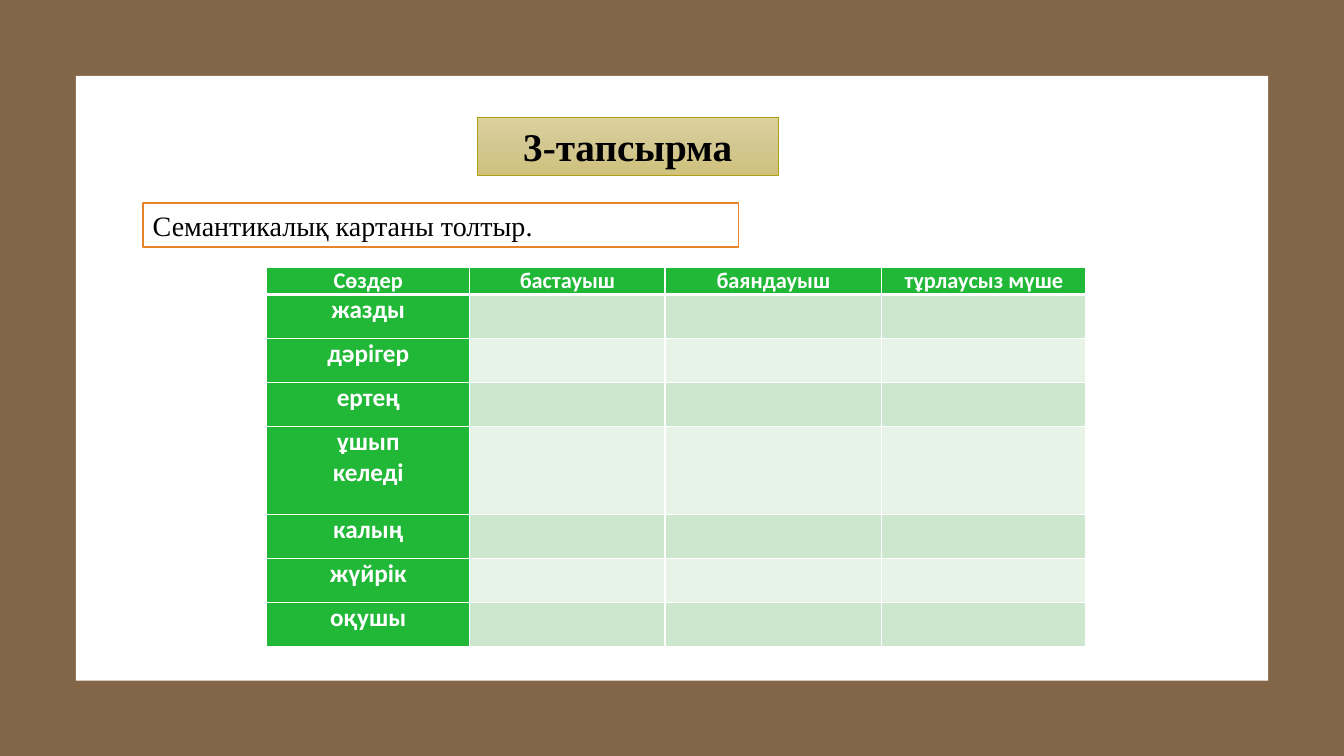
import copy

import lxml.etree
import pptx
import pptx.dml.color
import pptx.enum.shapes
import pptx.enum.text
import pptx.oxml.ns
import pptx.util

Cm, Pt = pptx.util.Cm, pptx.util.Pt
ALIGN = pptx.enum.text.PP_ALIGN
QN = pptx.oxml.ns.qn

COLORS = {
    "frame": "836548", "white": "FFFFFF", "black": "000000",
    "gold": "B2A213", "orange": "E78429", "green": "21B837",
    "odd": "CDE6CE", "even": "E8F3E8",
}
GOLDS = ("DCD29E", "D2C791", "D0C27C")
HEADS = ("Сөздер", "бастауыш", "баяндауыш", "тұрлаусыз мүше")
WORDS = ("жазды", "дәрігер", "ертең", "ұшып\nкеледі", "калың", "жүйрік", "оқушы")
WIDTHS = (5.12, 4.92, 5.46, 5.15)
SERIF = "Times New Roman"


def rgb(name):
    return pptx.dml.color.RGBColor.from_string(COLORS[name])


def paint(item, name):
    item.fill.solid()
    item.fill.fore_color.rgb = rgb(name)


def outline(shape, name, width):
    shape.line.color.rgb = rgb(name)
    shape.line.width = Pt(width)


def write(frame, text, font, size, color, align, bold=False):
    frame.text = text
    for para in frame.paragraphs:
        para.alignment = align
        para.font.name = font
        para.font.size = Pt(size)
        para.font.bold = bold
        para.font.color.rgb = rgb(color)


def add_panel(slide, left, top, width, height, color):
    panel = slide.shapes.add_shape(
        pptx.enum.shapes.MSO_SHAPE.RECTANGLE,
        Cm(left), Cm(top), Cm(width), Cm(height))
    panel.shadow.inherit = False
    paint(panel, color)
    panel.line.fill.background()


def shade(shape):
    """Fill the shape with the three golds, from top to bottom."""
    shape.fill.gradient()
    shape.fill.gradient_angle = 270
    stops = shape.fill.gradient_stops
    first = stops[0]._gs
    first.addnext(copy.deepcopy(first))
    for i, (stop, tone) in enumerate(zip(shape.fill.gradient_stops, GOLDS)):
        stop.color.rgb = pptx.dml.color.RGBColor.from_string(tone)
        stop.position = i / 2


def set_title(slide, text):
    title = slide.shapes.title
    title.left, title.top = Cm(12.02), Cm(2.95)
    title.width, title.height = Cm(7.6), Cm(1.46)
    shade(title)
    outline(title, "gold", 0.5)
    write(title.text_frame, text, SERIF, 28, "black", ALIGN.CENTER, True)
    title.text_frame.auto_size = pptx.enum.text.MSO_AUTO_SIZE.NONE
    # Bring the title in front of the panels
    slide.shapes._spTree.append(title._element)


def add_task(slide, text):
    box = slide.shapes.add_textbox(Cm(3.6), Cm(5.12), Cm(15.02), Cm(1.11))
    paint(box, "white")
    outline(box, "orange", 1)
    box.text_frame.word_wrap = True
    write(box.text_frame, text, SERIF, 20, "black", ALIGN.JUSTIFY)


def set_edges(cell, row):
    """Draw white cell borders, thick between the header and the first row."""
    props = cell._tc.get_or_add_tcPr()
    for side in "LRTB":
        thick = (row, side) in ((0, "B"), (1, "T"))
        edge = lxml.etree.SubElement(
            props, QN("a:ln" + side), w=str(Pt(3 if thick else 1)))
        fill = lxml.etree.SubElement(edge, QN("a:solidFill"))
        lxml.etree.SubElement(fill, QN("a:srgbClr"), val=COLORS["white"])


def fill_cell(cell, text, size):
    cell.margin_left = cell.margin_right = Cm(0.18)
    cell.margin_top = cell.margin_bottom = 0
    write(cell.text_frame, text, "Calibri", size, "white", ALIGN.CENTER, True)


def add_map(slide):
    rows = len(WORDS) + 1
    table = slide.shapes.add_table(
        rows, len(HEADS), Cm(6.72), Cm(6.74), Cm(sum(WIDTHS)), Cm(9.5)).table
    for column, width in zip(table.columns, WIDTHS):
        column.width = Cm(width)
    table.rows[0].height = Cm(0.6)
    for i, word in enumerate(WORDS, 1):
        table.rows[i].height = Cm(1.11 * len(word.split("\n")))
    for r in range(rows):
        for c in range(len(HEADS)):
            cell = table.cell(r, c)
            set_edges(cell, r)
            if r == 0:
                fill_cell(cell, HEADS[c], 16)
            elif c == 0:
                fill_cell(cell, WORDS[r - 1], 18)
            label = r == 0 or c == 0
            paint(cell, "green" if label else "odd" if r % 2 else "even")


def main():
    deck = pptx.Presentation()
    deck.slide_width, deck.slide_height = Cm(33.87), Cm(19.05)
    slide = deck.slides.add_slide(deck.slide_layouts[5])
    add_panel(slide, 0, 0, 33.87, 19.05, "frame")
    add_panel(slide, 1.91, 1.91, 30.05, 15.24, "white")
    set_title(slide, "3-тапсырма")
    add_task(slide, "Семантикалық картаны толтыр.")
    add_map(slide)
    deck.save("out.pptx")


if __name__ == "__main__":
    main()
